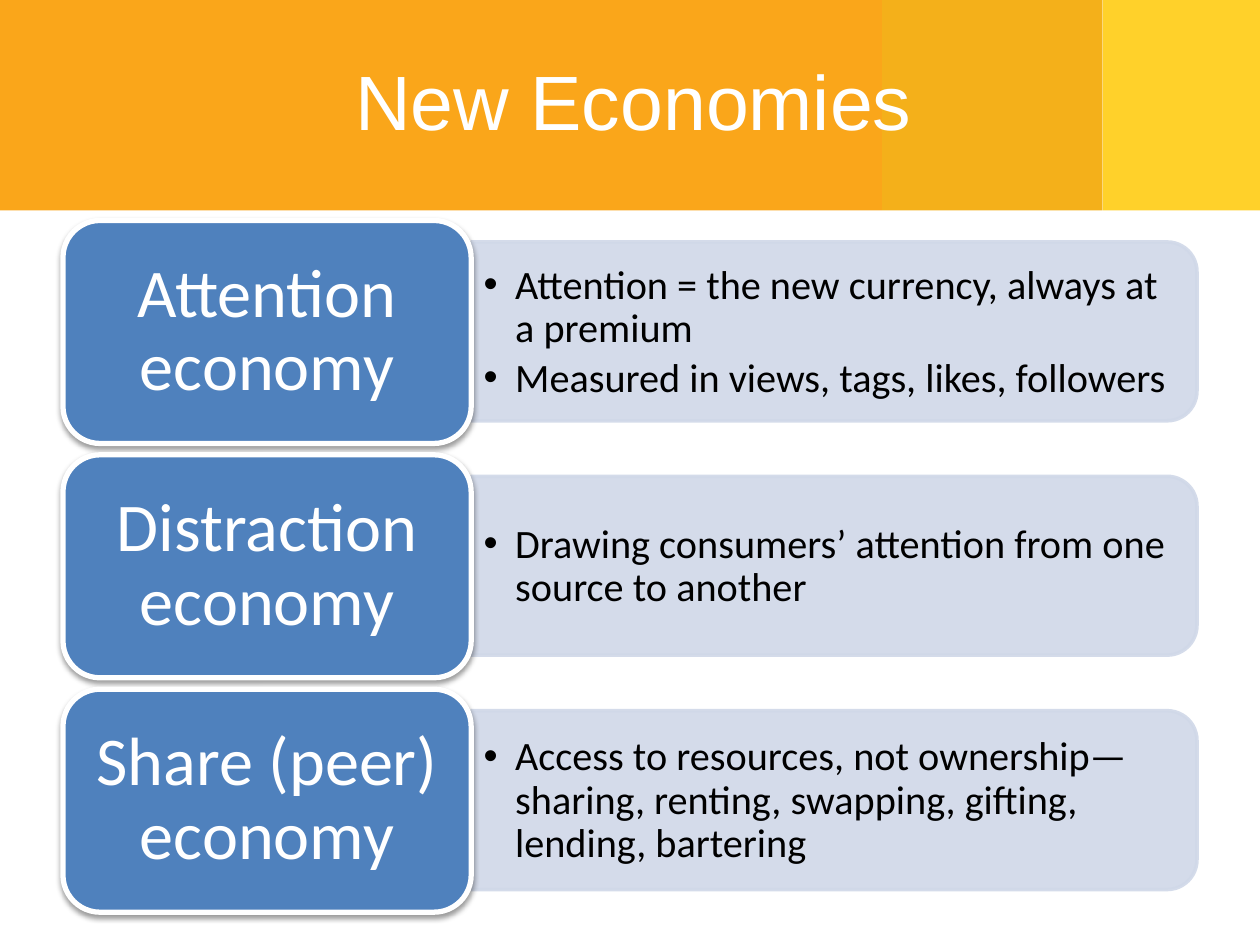
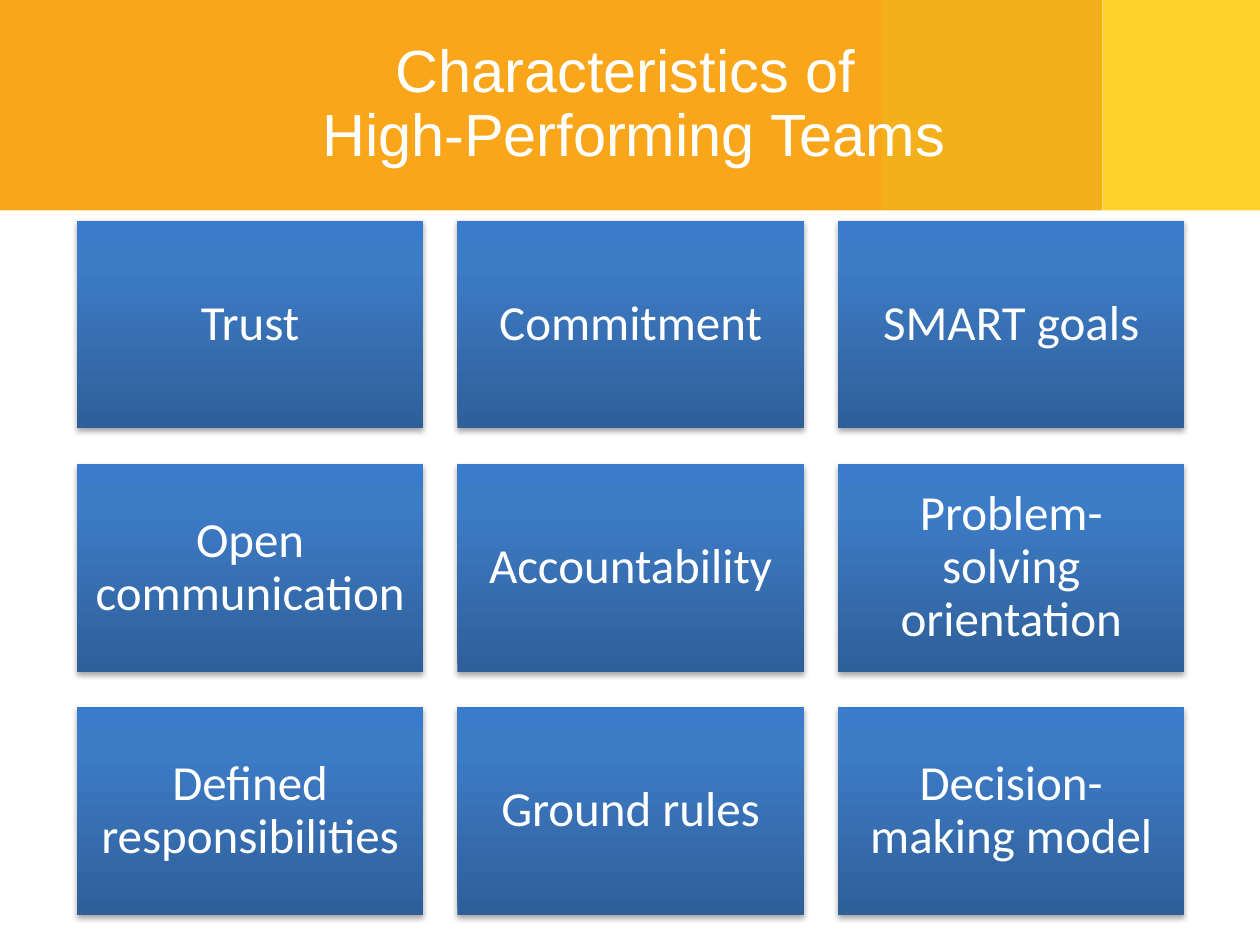
from pptx import Presentation, util as u
from pptx.dml.color import RGBColor
from pptx.enum import shapes, text
from pptx.oxml import parse_xml
from pptx.oxml.ns import nsdecls

PX = 9144
KIND = shapes.MSO_SHAPE
MID = text.MSO_ANCHOR.MIDDLE
LEFT, MIDDLE = text.PP_ALIGN.LEFT, text.PP_ALIGN.CENTER
HUES = {
    "sun": "FFD12A", "gold": "F4B01A", "orange": "FAA61A",
    "white": "FFFFFF", "black": "000000", "blue": "4F81BD", "mist": "D0D8E8",
    "deep": "2F5F99", "mid": "3D7CC7", "top": "3A7CCB",
}
BANDS = [("sun", 875, 125), ("gold", 700, 175), ("orange", 0, 700)]
ECONOMIES = [
    ("Attention economy", ["Attention = the new currency, always at a premium",
                           "Measured in views, tags, likes, followers"]),
    ("Distraction economy", ["Drawing consumers’ attention from one source to another"]),
    ("Share (peer) economy", ["Access to resources, not ownership—sharing, renting, "
                              "swapping, gifting, lending, bartering"]),
]
TRAITS = ["Trust", "Commitment", "SMART goals",
          "Open communication", "Accountability", "Problem-solving orientation",
          "Defined responsibilities", "Ground rules", "Decision-making model"]


def xml(tag, body="", **vals):
    pairs = " ".join(f'{key}="{val}"' for key, val in vals.items())
    return parse_xml(f"<a:{tag} {nsdecls('a')} {pairs}>{body}</a:{tag}>")


def apply(item, vals):
    for key, val in vals.items():
        setattr(item, key, val)


def hue(name):
    return RGBColor.from_string(HUES[name])


class Deck:
    def __init__(self):
        self.show = Presentation()
        apply(self.show, {"slide_width": 1000 * PX, "slide_height": 750 * PX})
        self.base = self.show.slide_layouts[5]
        self.slide = None

    def page(self, title, size):
        first = self.slide is None
        self.slide = self.show.slides.add_slide(self.base)
        if first:
            self.bands()
        head = self.slide.shapes.title
        apply(head, dict(zip(("left", "top", "width", "height"),
                             (n * PX for n in (53, 25, 900, 117)))))
        self.letter(head, [title], size, "white", font="Arial", inset=(10, 5))

    def bands(self):
        for place, (name, x, wide) in enumerate(BANDS, 2):
            band = self.shape(KIND.RECTANGLE, x, 0, wide, 167, name)
            self.base.shapes.element.insert(place, band.element)

    def shape(self, kind, x, y, wide, high, fill=None, line=None, weight=0):
        item = self.slide.shapes.add_shape(kind, *(n * PX for n in (x, y, wide, high)))
        item.shadow.inherit = False
        if fill:
            item.fill.solid()
            item.fill.fore_color.rgb = hue(fill)
        if line:
            item.line.color.rgb = hue(line)
            item.line.width = u.Pt(weight)
        else:
            item.line.fill.background()
        return item

    def shade(self, item, alpha):
        glow = xml("outerShdw", f'<a:srgbClr val="{HUES["black"]}">'
                   f'<a:alpha val="{alpha * 1000}"/></a:srgbClr>',
                   blurRad=40000, dist=22000, dir=5400000, rotWithShape=0)
        item.element.spPr.find(".//{*}effectLst").append(glow)

    def letter(self, item, lines, size, color, font="Calibri", inset=(10, 10),
               align=MIDDLE, space=0.9):
        frame = item.text_frame
        side, edge = (n * PX for n in inset)
        apply(frame, {"word_wrap": True, "vertical_anchor": MID,
                      "margin_left": side, "margin_right": side,
                      "margin_top": edge, "margin_bottom": edge})
        frame.text = "\n".join(lines)
        for para in frame.paragraphs:
            apply(para, {"alignment": align, "line_spacing": space})
            for run in para.runs:
                apply(run.font, {"name": font, "size": u.Pt(size)})
                run.font.color.rgb = hue(color)
        return frame

    def bar(self, x, y, wide, high):
        left, top = x + (wide - high) // 2, y + (high - wide) // 2
        item = self.shape(KIND.ROUND_2_SAME_RECTANGLE, left, top, high, wide,
                          "mist", "mist", 2)
        item.rotation = 90
        for color in item.element.spPr.iterfind(".//{*}srgbClr"):
            color.append(xml("alpha", val=90000))

    def points(self, lines, x, y, wide, high):
        box = self.slide.shapes.add_textbox(*(n * PX for n in (x, y, wide, high)))
        frame = self.letter(box, lines, 23, "black", inset=(10, 5), align=LEFT)
        for para in frame.paragraphs:
            apply(para, {"level": 1, "space_after": u.Pt(3.5)})
            props = para._p.get_or_add_pPr()
            props.set("marL", str(25 * PX))
            props.set("indent", str(-25 * PX))
            props.append(xml("buFont", typeface="Arial"))
            props.append(xml("buChar", char="•"))

    def label(self, words, x, y, wide, high):
        item = self.shape(KIND.ROUNDED_RECTANGLE, x, y, wide, high, "blue", "white", 3)
        self.shade(item, 38)
        self.letter(item, [words], 39, "white", inset=(16, 8))

    def tile(self, words, x, y, wide, high):
        item = self.shape(KIND.RECTANGLE, x, y, wide, high)
        stops = "".join(f'<a:gs pos="{pos * 1000}"><a:srgbClr val="{HUES[name]}"/></a:gs>'
                        for pos, name in ((0, "deep"), (80, "mid"), (100, "top")))
        fill = xml("gradFill", f'<a:gsLst>{stops}</a:gsLst>'
                   '<a:lin ang="16200000" scaled="0"/>', rotWithShape=1)
        item.element.spPr.find("{*}prstGeom").addnext(fill)
        self.shade(item, 35)
        self.letter(item, [words], 28, "white", inset=(12, 12))


def main():
    deck = Deck()
    deck.page("New Economies", 44)
    for row, (name, lines) in enumerate(ECONOMIES):
        y = 175 + 186 * row
        deck.bar(374, y + 17, 576, 142)
        deck.points(lines, 374, y + 25, 569, 128)
        deck.label(name, 50, y, 324, 177)

    deck.page("Characteristics of \vHigh-Performing Teams", 34)
    for spot, trait in enumerate(TRAITS):
        row, col = divmod(spot, 3)
        deck.tile(trait, 61 + 302 * col, 175 + 193 * row, 275, 165)
    deck.show.save("out.pptx")


if __name__ == "__main__":
    main()
